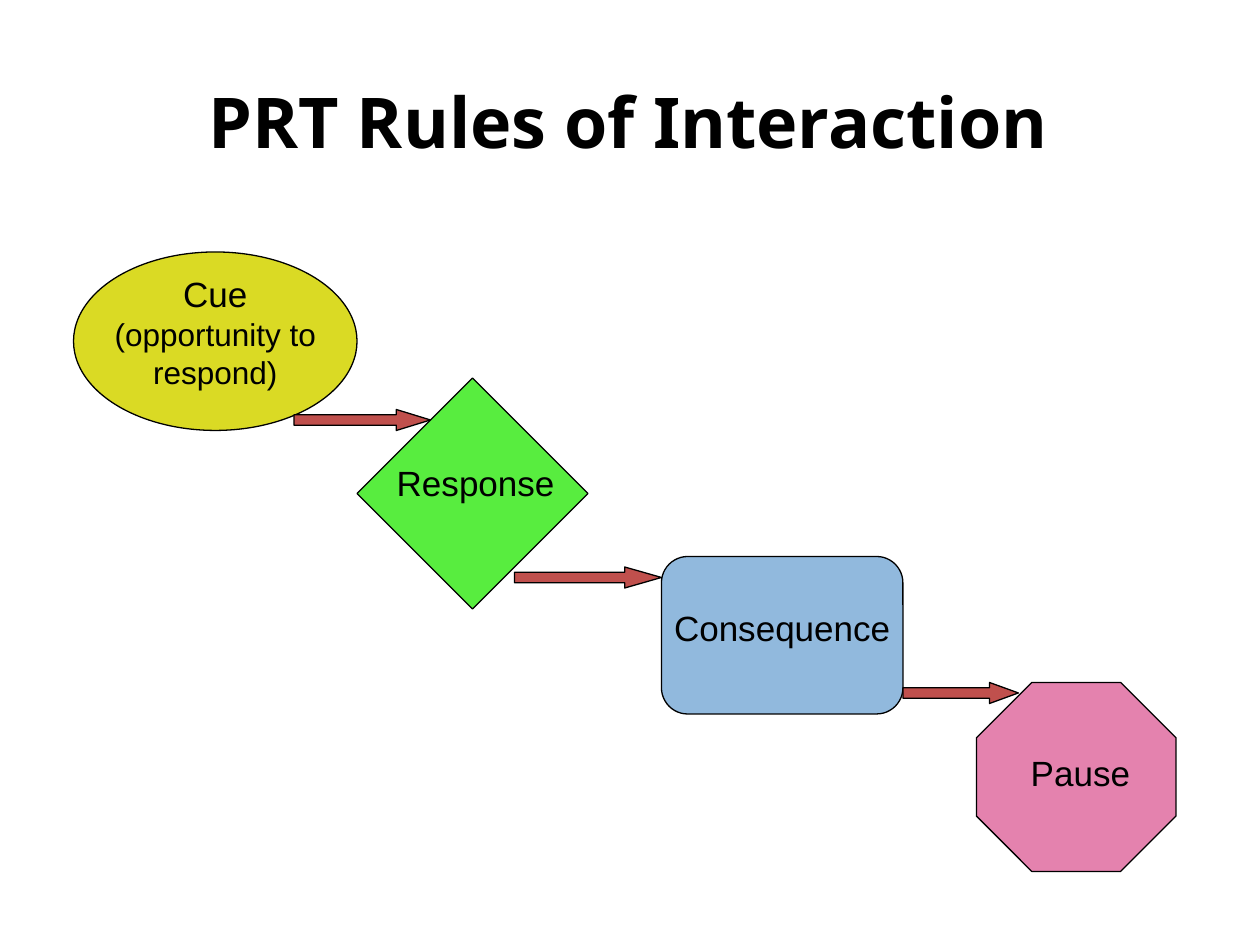
from pptx import Presentation
from pptx.dml.color import RGBColor
from pptx.enum.shapes import MSO_SHAPE
from pptx.enum.text import MSO_ANCHOR, PP_ALIGN
from pptx.util import Inches, Pt

OVAL, DIAMOND = MSO_SHAPE.OVAL, MSO_SHAPE.DIAMOND
ROUNDED, OCTAGON = MSO_SHAPE.ROUNDED_RECTANGLE, MSO_SHAPE.OCTAGON
ARROW = MSO_SHAPE.RIGHT_ARROW
TOP, MIDDLE, CENTER = MSO_ANCHOR.TOP, MSO_ANCHOR.MIDDLE, PP_ALIGN.CENTER

CELLS_PER_INCH = 12
ARROW_HEIGHT = 2
ARROW_HEAD = 3.25 / 13  # head length as a share of the arrow's length

# Outline, then column, row, columns wide, rows high, and fill
STEPS = [
    (OVAL, (7, 24, 27, 17), "DADA24"),
    (OCTAGON, (93, 65, 19, 18), "E482AE"),
    (DIAMOND, (34, 36, 22, 22), "58ED3F"),
    (ROUNDED, (63, 53, 23, 15), "91B9DD"),
]
# Column, row and columns wide
ARROWS = [(28, 39, 13), (49, 54, 14), (86, 65, 11)]
LABELS = [
    ((10, 26, 21, 12), [("Cue", 20), (" (opportunity to respond)", 18)]),
    ((34.8, 44, 21, 5), [("Response", 20)]),
    ((62, 57.8, 25, 5), [("Consequence", 20)]),
    ((92.4, 71.6, 21, 5), [("Pause", 20)]),
]


def color(hex_code):
    return RGBColor.from_string(hex_code)


def cells(*counts):
    """Turn grid counts into lengths."""
    return [Inches(count / CELLS_PER_INCH) for count in counts]


def add_block(slide, outline, place, fill):
    block = slide.shapes.add_shape(outline, *cells(*place))
    block.shadow.inherit = False
    block.fill.solid()
    block.fill.fore_color.rgb = color(fill)
    block.line.color.rgb = color("000000")
    block.line.width = Pt(0.75)
    return block


def add_arrow(slide, column, row, width):
    arrow = add_block(slide, ARROW, (column, row, width, ARROW_HEIGHT), "C0504D")
    arrow.adjustments[0] = 0.5
    arrow.adjustments[1] = width * ARROW_HEAD / ARROW_HEIGHT


def add_text(slide, place, pieces, font="Arial", bold=False, anchor=TOP):
    """Add one centred paragraph made of (wording, size) pieces."""
    frame = slide.shapes.add_textbox(*cells(*place)).text_frame
    frame.word_wrap = True
    frame.vertical_anchor = anchor
    frame.margin_left = frame.margin_right = 0
    frame.margin_top = frame.margin_bottom = 0
    paragraph = frame.paragraphs[0]
    paragraph.alignment = CENTER
    for wording, size in pieces:
        run = paragraph.add_run()
        run.text = wording
        run.font.name = font
        run.font.size = Pt(size)
        run.font.bold = bold
        run.font.color.rgb = color("000000")


def main():
    deck = Presentation()
    deck.slide_width, deck.slide_height = Inches(10), Inches(7.5)
    slide = deck.slides.add_slide(deck.slide_layouts[6])

    add_text(slide, (6, 2, 107.6, 19), [("PRT Rules of Interaction", 40)],
             font="Noto Sans", bold=True, anchor=MIDDLE)
    for outline, place, fill in STEPS:
        add_block(slide, outline, place, fill)
    for column, row, width in ARROWS:
        add_arrow(slide, column, row, width)
    for place, pieces in LABELS:
        add_text(slide, place, pieces)

    deck.save("out.pptx")


if __name__ == "__main__":
    main()
